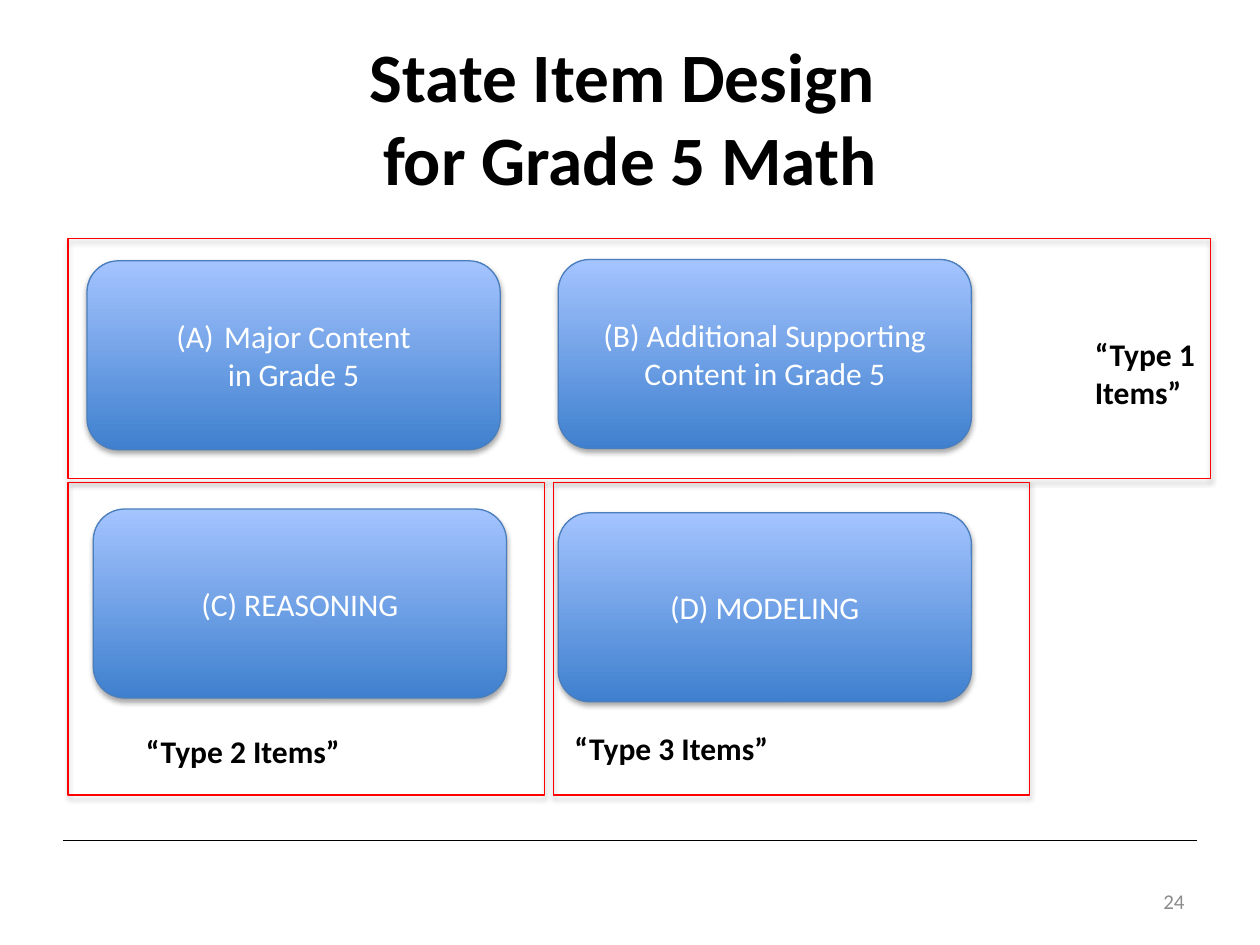
from dataclasses import dataclass

from lxml.etree import SubElement as Sub
from pptx import Presentation
from pptx.dml.color import RGBColor as RGB
from pptx.enum.shapes import MSO_CONNECTOR as Link, MSO_SHAPE as Form
from pptx.enum.text import MSO_ANCHOR as Anchor, MSO_AUTO_SIZE as Fit, PP_ALIGN as Align
from pptx.oxml.ns import qn
from pptx.util import Inches, Pt


@dataclass(frozen=True)
class Theme:
    font: str = "Calibri"
    ink: str = "000000"
    pale: str = "FFFFFF"
    gray: str = "8C8C8C"
    edge: str = "4B7EBC"
    low: str = "3F80CE"
    high: str = "A4C4FF"
    red: str = "FF0000"
    head: float = 39.6
    body: int = 18
    small: int = 12
    thin: float = 0.5
    line: float = 0.75


class Board:
    """Holds the theme and the current slide."""

    def __init__(self, deck, theme):
        self.theme = theme
        self.slide = deck.slides.add_slide(deck.slide_layouts[5])
        self.shapes = self.slide.shapes

    def style(self, frame, size, color, align, bold=False):
        for para in frame.paragraphs:
            para.alignment = align
            for run in para.runs:
                font = run.font
                font.name, font.size, font.bold = self.theme.font, Pt(size), bold
                font.color.rgb = RGB.from_string(color)

    def shade(self, shape):
        shape.shadow.inherit = False
        fx = shape._element.spPr.find(qn("a:effectLst"))
        cast = Sub(fx, qn("a:outerShdw"), blurRad=str(Pt(3.1)), dist=str(Pt(1.8)),
                   dir="5400000", rotWithShape="0")
        tint = Sub(cast, qn("a:srgbClr"), val=self.theme.ink)
        Sub(tint, qn("a:alpha"), val="35000")

    def form(self, kind, box, edge):
        shape = self.shapes.add_shape(kind, *map(Inches, box))
        shape.line.color.rgb = RGB.from_string(edge)
        shape.line.width = Pt(self.theme.line)
        self.shade(shape)
        return shape

    def title(self, text, box):
        head = self.shapes.title
        head.left, head.top, head.width, head.height = map(Inches, box)
        frame = head.text_frame
        frame.text = text
        frame.auto_size = Fit.NONE
        frame.vertical_anchor = Anchor.MIDDLE
        self.style(frame, self.theme.head, self.theme.ink, Align.CENTER, True)

    def rule(self, left, right, top):
        line = self.shapes.add_connector(
            Link.STRAIGHT, *map(Inches, (left, top, right, top)))
        line.line.color.rgb = RGB.from_string(self.theme.ink)
        line.line.width = Pt(self.theme.thin)
        Sub(line._element.spPr, qn("a:effectLst"))

    def card(self, text, box, listed=False):
        shape = self.form(Form.ROUNDED_RECTANGLE, box, self.theme.edge)
        shape.fill.gradient()
        shape.fill.gradient_angle = 90
        for stop, color in zip(shape.fill.gradient_stops,
                               (self.theme.low, self.theme.high)):
            stop.color.rgb = RGB.from_string(color)
        frame = shape.text_frame
        frame.text = text
        frame.word_wrap = True
        frame.vertical_anchor = Anchor.MIDDLE
        if listed:
            props = frame.paragraphs[0]._p.get_or_add_pPr()
            props.set("marL", str(Inches(0.38)))
            props.set("indent", str(Inches(-0.38)))
            Sub(props, qn("a:buFont"), typeface="+mj-lt")
            Sub(props, qn("a:buAutoNum"), type="alphaUcParenBoth")
        self.style(frame, self.theme.body, self.theme.pale, Align.CENTER)

    def frame(self, box):
        self.form(Form.RECTANGLE, box, self.theme.red).fill.background()

    def label(self, text, box):
        frame = self.shapes.add_textbox(*map(Inches, box)).text_frame
        frame.text = text
        frame.word_wrap = True
        frame.auto_size = Fit.SHAPE_TO_FIT_TEXT
        self.style(frame, self.theme.body, self.theme.ink, Align.LEFT, True)

    def number(self, text, box):
        frame = self.shapes.add_textbox(*map(Inches, box)).text_frame
        frame.text = text
        frame.word_wrap = True
        frame.vertical_anchor = Anchor.MIDDLE
        self.style(frame, self.theme.small, self.theme.gray, Align.RIGHT)


def main():
    deck = Presentation()
    deck.slide_width, deck.slide_height = Inches(10), Inches(7.5)
    board = Board(deck, Theme())

    # Title, footer rule and page number
    board.rule(0.5, 9.5, 6.67)
    board.title("State Item Design \vfor Grade 5 Math", (0.5, 0.3, 9, 1.25))
    board.number("24", (7.17, 6.95, 2.33, 0.4))

    # Content cards, all of one size
    size = (3.28, 1.5)
    board.card("Major Content\nin Grade 5", (0.69, 2.07, *size), listed=True)
    for text, left, top in (
        ("(B) Additional Supporting Content in Grade 5", 4.43, 2.06),
        ("(C) REASONING", 0.74, 4.04),
        ("(D) MODELING", 4.43, 4.07),
    ):
        board.card(text, (left, top, *size))

    # Item type labels
    board.label("“Type 1 Items”", (8.59, 2.61, 1.41, 0.71))
    board.label("“Type 2 Items”", (1.06, 5.76, 2.83, 0.41))
    board.label("“Type 3 Items”", (4.46, 5.74, 2.83, 0.41))

    # Red frames around each item type
    board.frame((0.54, 1.89, 9.07, 1.91))
    for left in (0.54, 4.39):
        board.frame((left, 3.83, 3.78, 2.48))

    deck.save("out.pptx")


if __name__ == "__main__":
    main()
